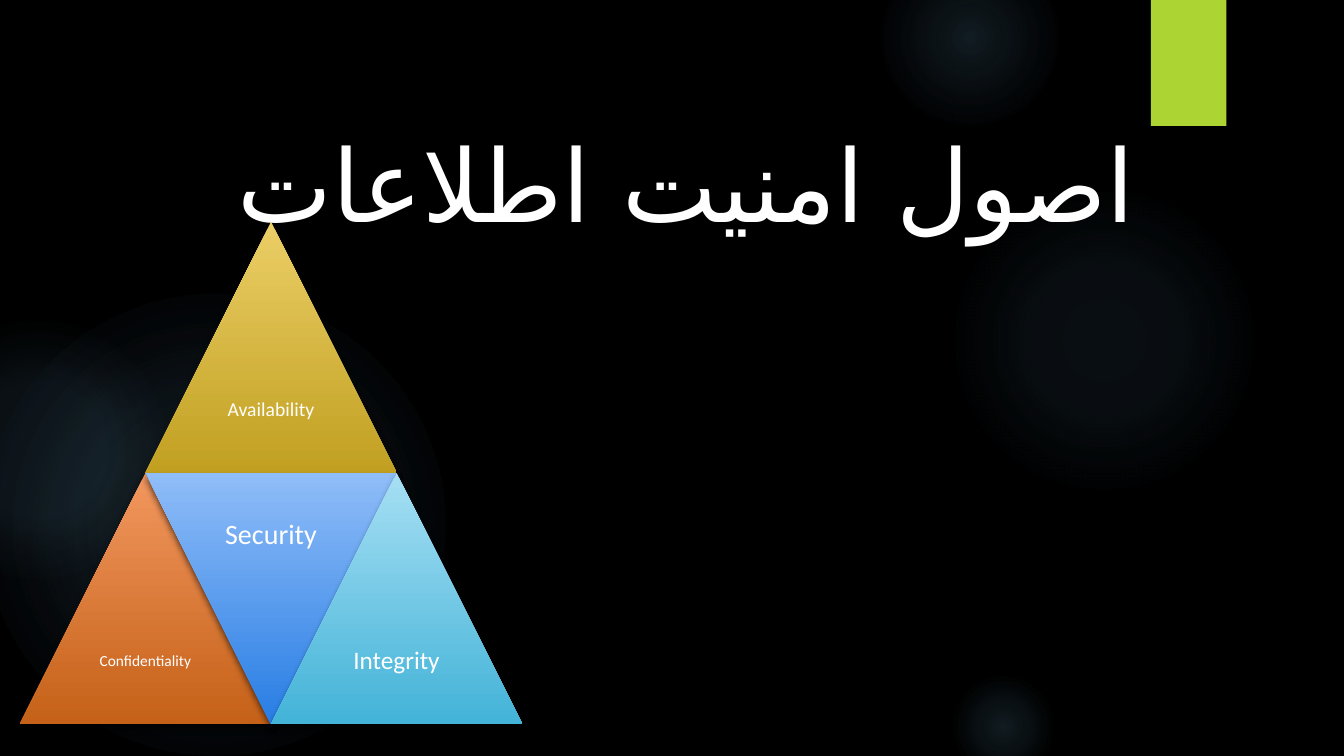
from dataclasses import dataclass

from lxml import etree
from pptx import Presentation
from pptx.dml.color import RGBColor
from pptx.enum.shapes import MSO_SHAPE as SHAPE
from pptx.enum.text import MSO_ANCHOR as ANCHOR, MSO_AUTO_SIZE as AUTO, PP_ALIGN as ALIGN
from pptx.oxml import parse_xml
from pptx.oxml.ns import nsdecls, qn
from pptx.util import Pt


@dataclass(frozen=True)
class Theme:
    background: str = "000000"
    text: str = "FFFFFF"
    accent: str = "ACD433"
    glow: str = "7AC4F0"
    title_font: str = "TeX Gyre Adventor"
    arabic_font: str = "DejaVu Sans"
    label_font: str = "Calibri"
    title_size: int = 72
    gold: tuple = ("EBCE66", "C1A021")
    orange: tuple = ("F2975F", "C56118")
    blue: tuple = ("8FBDF8", "287DE4")
    cyan: tuple = ("A6DFF3", "43B3D8")


THEME = Theme()
SIDE = 179.4
LEFT, TOP = 14.2, 158.4

# left, top, diameter, (position %, opacity %) of each stop
GLOWS = [
    (-12, 210, 330, [(0, 11), (36, 10), (75, 0)]),
    (-66, 228, 186, [(0, 8), (36, 8), (72, 0)]),
    (677.5, 132, 222, [(0, 7), (36, 6), (69, 0)]),
    (630, -36, 126, [(0, 14), (36, 7), (73, 0)]),
    (677.5, 480, 78, [(0, 14), (36, 7), (66, 0)]),
]

# label, size, column in half sides, row, colours, points down
TRIANGLES = [
    ("Availability", 14, 1, 0, THEME.gold, False),
    ("Confidentiality", 11, 0, 1, THEME.orange, False),
    ("Security", 20, 1, 1, THEME.blue, True),
    ("Integrity", 18, 2, 1, THEME.cyan, False),
]


def rgb(value):
    return RGBColor.from_string(value)


def add_plain(shapes, kind, x, y, w, h):
    sp = shapes.add_shape(kind, Pt(x), Pt(y), Pt(w), Pt(h))
    sp.shadow.inherit = False
    sp.line.fill.background()
    return sp


def set_gradient(sp, stops, direction):
    """Fill with (position %, colour, opacity %) stops along the direction XML."""
    sp.fill.background()
    stop_xml = "".join(
        f'<a:gs pos="{pos * 1000}"><a:srgbClr val="{color}">'
        f'<a:alpha val="{alpha * 1000}"/></a:srgbClr></a:gs>'
        for pos, color, alpha in stops)
    sp_pr = sp._element.spPr
    sp_pr.replace(sp_pr.find(qn("a:noFill")), parse_xml(
        f'<a:gradFill {nsdecls("a")} rotWithShape="0">'
        f'<a:gsLst>{stop_xml}</a:gsLst>{direction}</a:gradFill>'))


def set_shadow(sp, alpha, blur, distance):
    effects = sp._element.spPr.find(qn("a:effectLst"))
    effects.append(parse_xml(
        f'<a:outerShdw {nsdecls("a")} blurRad="{Pt(blur)}" dist="{Pt(distance)}" '
        f'dir="5400000" rotWithShape="0"><a:srgbClr val="000000">'
        f'<a:alpha val="{alpha * 1000}"/></a:srgbClr></a:outerShdw>'))


def add_text(shapes, text, x, y, w, h, font, size, align):
    tb = shapes.add_textbox(Pt(x), Pt(y), Pt(w), Pt(h))
    tf = tb.text_frame
    tf.word_wrap = True
    p = tf.paragraphs[0]
    p.text = text
    p.alignment = align
    p.font.name, p.font.size = font, Pt(size)
    p.font.color.rgb = rgb(THEME.text)
    return tf


def add_glow(shapes, x, y, diameter, stops):
    sp = add_plain(shapes, SHAPE.OVAL, x, y, diameter, diameter)
    set_gradient(sp, [(pos, THEME.glow, alpha) for pos, alpha in stops],
                 '<a:path path="circle">'
                 '<a:fillToRect l="50000" t="50000" r="50000" b="50000"/></a:path>')


def add_ribbon(shapes):
    sp = add_plain(shapes, SHAPE.RECTANGLE, 822, 0, 54, 90)
    sp.fill.solid()
    sp.fill.fore_color.rgb = rgb(THEME.accent)
    set_shadow(sp, 45, 3, 2)


def add_title(shapes, text):
    tf = add_text(shapes, text, 108, 79.2, 710.6, 94.3,
                  THEME.title_font, THEME.title_size, ALIGN.RIGHT)
    tf.auto_size = AUTO.SHAPE_TO_FIT_TEXT
    tf.margin_top = Pt(8)
    p = tf.paragraphs[0]
    p._p.get_or_add_pPr().set("rtl", "1")
    etree.SubElement(p.font._element, qn("a:cs")).set("typeface", THEME.arabic_font)


def add_triangle(shapes, label, size, column, row, colors, down):
    x, y = LEFT + column * SIDE / 2, TOP + row * SIDE
    sp = add_plain(shapes, SHAPE.ISOSCELES_TRIANGLE, x, y, SIDE, SIDE)
    sp.rotation = 180 if down else 0
    set_gradient(sp, [(0, colors[0], 100), (100, colors[1], 100)],
                 '<a:lin ang="5400000" scaled="0"/>')
    set_shadow(sp, 60, 5, 3)

    label_y = y if down else y + SIDE / 2
    tf = add_text(shapes, label, x + SIDE / 4, label_y, SIDE / 2, SIDE / 2,
                  THEME.label_font, size, ALIGN.CENTER)
    tf.vertical_anchor = ANCHOR.MIDDLE
    inset = Pt(size * 0.3)
    tf.margin_left = tf.margin_right = tf.margin_top = tf.margin_bottom = inset
    tf.paragraphs[0].line_spacing = 0.9


def main():
    prs = Presentation()
    prs.slide_width, prs.slide_height = Pt(960), Pt(540)
    s = prs.slides.add_slide(prs.slide_layouts[6])
    s.background.fill.solid()
    s.background.fill.fore_color.rgb = rgb(THEME.background)

    for glow in GLOWS:
        add_glow(s.shapes, *glow)
    add_ribbon(s.shapes)
    add_title(s.shapes, "اصول امنیت اطلاعات")
    pyramid = s.shapes.add_group_shape()
    for triangle in TRIANGLES:
        add_triangle(pyramid.shapes, *triangle)
    prs.save("out.pptx")


if __name__ == "__main__":
    main()
